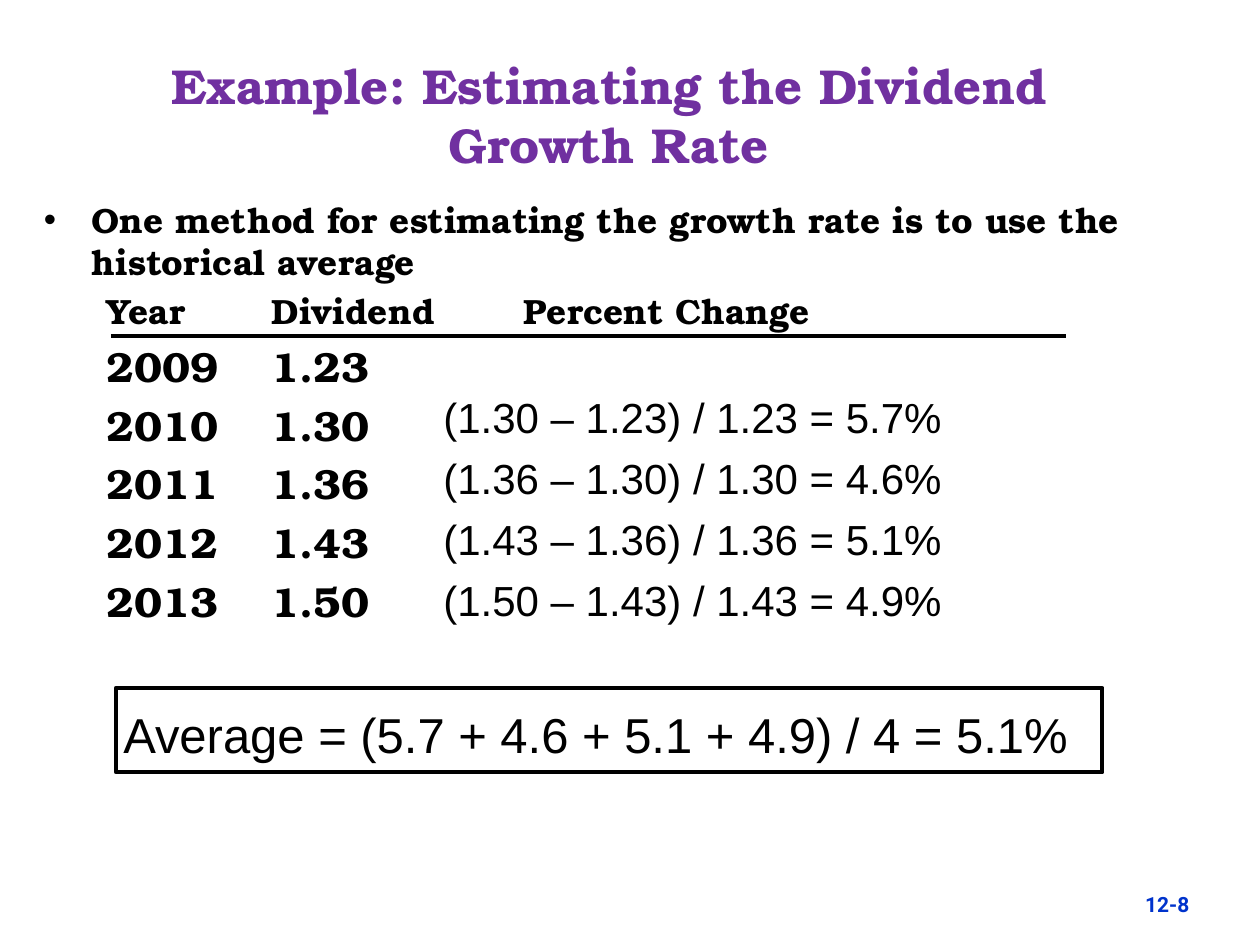
import pptx
import pptx.util
import pptx.dml.color
import pptx.enum.shapes
import pptx.enum.text
from lxml import etree

Inches = pptx.util.Inches
Pt = pptx.util.Pt
ALIGN = pptx.enum.text.PP_ALIGN
ANCHOR = pptx.enum.text.MSO_ANCHOR
SERIF = "TeX Gyre Bonum"
SANS = "Arial"
BLACK = "000000"


def color(code):
    return pptx.dml.color.RGBColor.from_string(code)


def add_tag(parent, name, **attrs):
    space = parent.nsmap["a"]
    return etree.SubElement(parent, "{%s}%s" % (space, name), attrs)


class Deck:
    def __init__(self):
        self.prs = pptx.Presentation()
        self.prs.slide_width = Inches(10)
        self.prs.slide_height = Inches(7.5)
        self.slide = self.prs.slides.add_slide(self.prs.slide_layouts[6])

    def box(self, place, anchor=ANCHOR.TOP):
        shape = self.slide.shapes.add_textbox(*map(Inches, place))
        frame = shape.text_frame
        frame.word_wrap = True
        frame.vertical_anchor = anchor
        return frame

    def style(self, para, size, font=SERIF, code=BLACK, bold=True):
        for run in para.runs:
            run.font.size = Pt(size)
            run.font.name = font
            run.font.bold = bold
            run.font.color.rgb = color(code)

    def text(self, place, lines, size, gap=0, align=ALIGN.LEFT,
             anchor=ANCHOR.TOP, **look):
        frame = self.box(place, anchor)
        frame.text = "\n".join(lines)
        for i, para in enumerate(frame.paragraphs):
            para.alignment = align
            if i:
                para.space_before = Pt(gap)
            self.style(para, size, **look)

    def body(self, place, point, rows):
        frame = self.box(place)
        frame.text = "\n".join([point] + ["\t".join(row) for row in rows])
        for i, para in enumerate(frame.paragraphs):
            size = 20 if i < 2 else 24
            left, hang = (0.81, 0.31) if i else (0.38, 0.38)
            props = para._p.get_or_add_pPr()
            props.set("marL", str(Inches(left)))
            props.set("indent", str(-Inches(hang)))
            props.set("defTabSz", str(Inches(1)))
            if i:
                # Table rows start at the hanging edge
                para.level = 1
                para.space_before = Pt(size * 0.2)
                add_tag(props, "buNone")
            else:
                add_tag(props, "buFont", typeface=SANS)
                add_tag(props, "buChar", char="•")
            self.style(para, size)

    def rule(self, x1, y1, x2, y2):
        kind = pptx.enum.shapes.MSO_CONNECTOR.STRAIGHT
        line = self.slide.shapes.add_connector(
            kind, *map(Inches, (x1, y1, x2, y2)))
        self.stroke(line)
        add_tag(line._element.spPr, "effectLst")

    def frame(self, place):
        kind = pptx.enum.shapes.MSO_SHAPE.RECTANGLE
        shape = self.slide.shapes.add_shape(kind, *map(Inches, place))
        shape.shadow.inherit = False
        shape.fill.background()
        self.stroke(shape)

    def stroke(self, shape):
        shape.line.color.rgb = color(BLACK)
        shape.line.width = Pt(2.25)


def main():
    deck = Deck()

    # Page number and title
    deck.text((8.99, 7.03, 0.92, 0.34), ["12-8"], 12,
              font="Roboto", code="0033CC")
    deck.text((0.67, 0.28, 8.33, 1.25),
              ["Example: Estimating the Dividend Growth Rate"], 28,
              align=ALIGN.CENTER, anchor=ANCHOR.MIDDLE, code="7030A0")

    # Bullet and dividend history
    rows = [("Year", "Dividend", "Percent Change"), ("2009", "1.23"),
            ("2010", "1.30"), ("2011", "1.36"), ("2012", "1.43"),
            ("2013", "1.50")]
    deck.body((0.25, 1.53, 9.48, 5.2),
              "One method for estimating the growth rate is to use the "
              "historical average", rows)

    # Yearly changes
    sums = ["(1.30 – 1.23) / 1.23 = 5.7%", "(1.36 – 1.30) / 1.30 = 4.6%",
            "(1.43 – 1.36) / 1.36 = 5.1%", "(1.50 – 1.43) / 1.43 = 4.9%"]
    deck.text((3.42, 3.06, 4.92, 1.96), sums, 24, gap=6,
              font=SANS, bold=False)

    # Average in its frame
    deck.text((0.88, 5.54, 8.08, 0.57),
              ["Average = (5.7 + 4.6 + 5.1 + 4.9) / 4 = 5.1%"], 28,
              font=SANS, bold=False)
    deck.rule(0.88, 2.67, 8.46, 2.67)
    deck.frame((0.92, 5.46, 7.83, 0.67))

    deck.prs.save("out.pptx")


if __name__ == "__main__":
    main()
